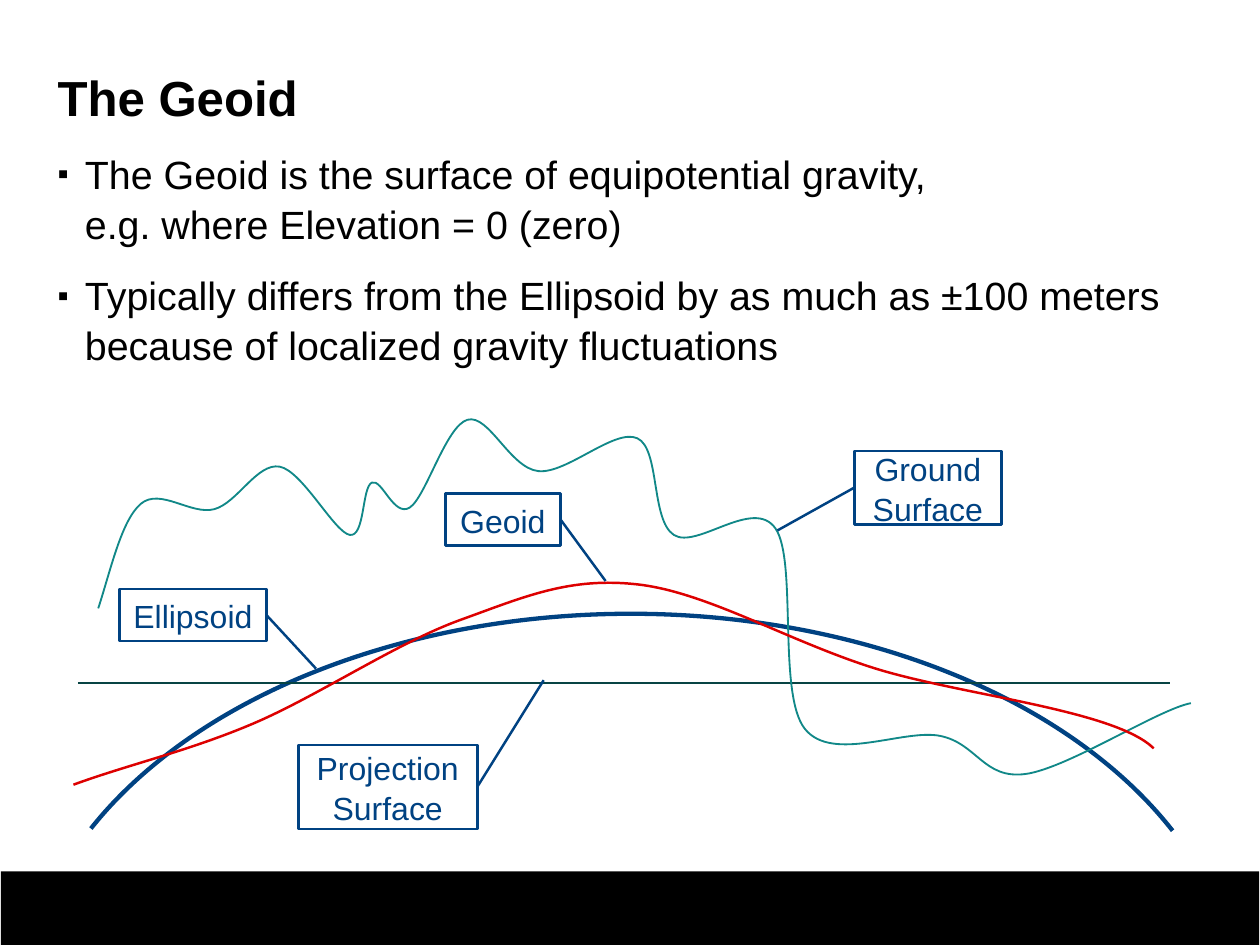
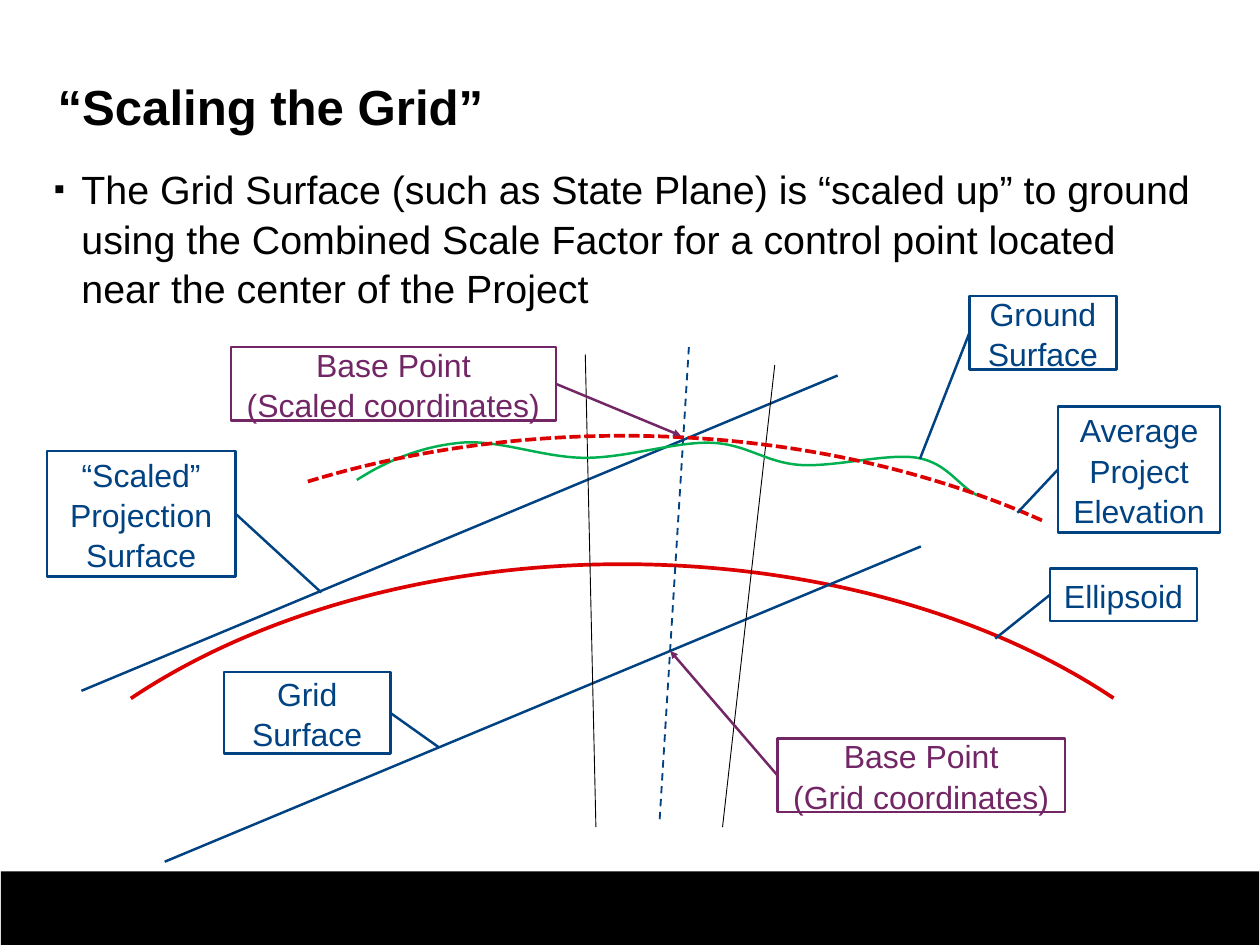
"""Build two slides on the geoid and on scaling a grid to ground."""
from lxml.etree import SubElement
from pptx import Presentation
from pptx.dml.color import RGBColor
from pptx.enum.dml import MSO_LINE
from pptx.enum.shapes import MSO_CONNECTOR, MSO_SHAPE
from pptx.enum.text import MSO_ANCHOR, PP_ALIGN
from pptx.oxml.ns import qn
from pptx.util import Emu, Inches, Pt

BLACK = RGBColor(0x00, 0x00, 0x00)
NAVY = RGBColor(0x00, 0x42, 0x82)
PURPLE = RGBColor(0x73, 0x26, 0x66)
RED = RGBColor(0xDD, 0x00, 0x00)
GREEN = RGBColor(0x00, 0xB0, 0x50)
TEAL = RGBColor(0x11, 0x88, 0x88)
DARK_TEAL = RGBColor(0x08, 0x44, 0x44)

FONT = "Arial"
CELL = Inches(0.1)
COLUMNS, ROWS = 142.3, 106.7
MARGIN, TEXT_WIDTH = 6.5, 128.6
LINE_SPACING = 1.05


def cells(*counts):
    """Turn counts of grid cells into lengths."""
    return [Emu(round(count * CELL)) for count in counts]


def format_text(frame, size, color, bold=False):
    """Give every paragraph of a frame the same type."""
    for paragraph in frame.paragraphs:
        paragraph.line_spacing = LINE_SPACING
        for span in paragraph.runs:
            span.font.name = FONT
            span.font.size = Pt(size)
            span.font.bold = bold
            span.font.color.rgb = color


def style_line(shape, color, width, dash=None):
    """Set the colour, width and dash of a line."""
    shape.line.color.rgb = color
    shape.line.width = Pt(width)
    if dash is not None:
        shape.line.dash_style = dash


def add_outline(page, kind, area, color, width, dash=None):
    """Add an unfilled preset shape."""
    shape = page.shapes.add_shape(kind, *cells(*area))
    shape.shadow.inherit = False
    shape.fill.background()
    style_line(shape, color, width, dash)
    return shape


def add_text(page, area, text):
    """Add a wrapping text box without margins and return its frame."""
    frame = page.shapes.add_textbox(*cells(*area)).text_frame
    frame.word_wrap = True
    frame.margin_left = frame.margin_right = 0
    frame.margin_top = frame.margin_bottom = 0
    frame.text = text
    return frame


def add_page(deck, title, title_height):
    """Add a page with its title and the black band at the foot."""
    page = deck.slides.add_slide(deck.slide_layouts[6])
    band = page.shapes.add_shape(
        MSO_SHAPE.RECTANGLE, *cells(0.1, 98.4, COLUMNS - 0.2, ROWS - 98.4))
    band.shadow.inherit = False
    band.fill.solid()
    band.fill.fore_color.rgb = BLACK
    band.line.fill.background()
    frame = add_text(page, (MARGIN, 4, TEXT_WIDTH, title_height), title)
    frame.vertical_anchor = MSO_ANCHOR.MIDDLE
    format_text(frame, 40, BLACK, bold=True)
    return page


def add_bullets(page, left, top, height, items):
    """Add a list with square bullets."""
    frame = add_text(page, (left, top, TEXT_WIDTH, height), "\n".join(items))
    indent, = cells(3.1)
    for index, paragraph in enumerate(frame.paragraphs):
        properties = paragraph._p.get_or_add_pPr()
        properties.set("marL", str(indent))
        properties.set("indent", str(-indent))
        color = SubElement(properties, qn("a:buClr"))
        SubElement(color, qn("a:srgbClr"), val=str(BLACK))
        SubElement(properties, qn("a:buSzPct"), val="80000")
        SubElement(properties, qn("a:buFont"), typeface=FONT)
        SubElement(properties, qn("a:buChar"), char="▪")
        if index:
            paragraph.space_before = Pt(18)
    format_text(frame, 32, BLACK)


def add_callout(page, text, area, target, color=NAVY, arrow=False):
    """Add a label whose leader runs from the nearer side to a target."""
    left, top, width, height = area
    box = add_outline(page, MSO_SHAPE.LINE_CALLOUT_1, area, color, 2)
    side = 1 if target[0] > left + width / 2 else 0
    leader = (0.5, side, (target[1] - top) / height, (target[0] - left) / width)
    for index, share in enumerate(leader):
        box.adjustments[index] = share
    if arrow:
        line = box.element.spPr.find(qn("a:ln"))
        SubElement(line, qn("a:tailEnd"), type="triangle")
    frame = box.text_frame
    frame.word_wrap = True
    frame.vertical_anchor = MSO_ANCHOR.MIDDLE
    frame.margin_left, frame.margin_right = cells(1.4, 1.4)
    frame.margin_top, frame.margin_bottom = cells(0.7, 0.7)
    frame.text = text
    for paragraph in frame.paragraphs:
        paragraph.alignment = PP_ALIGN.CENTER
    format_text(frame, 26, color)


def add_line(page, start, end, color, width, dash=None):
    """Add a straight line."""
    line = page.shapes.add_connector(
        MSO_CONNECTOR.STRAIGHT, *cells(*start, *end))
    style_line(line, color, width, dash)
    SubElement(line.element.spPr, qn("a:effectLst"))


def add_arc(page, area, angles, color, width, dash=None):
    """Add an arc between two angles in degrees."""
    arc = add_outline(page, MSO_SHAPE.ARC, area, color, width, dash)
    for index, angle in enumerate(angles):
        arc.adjustments[index] = angle * 0.6


def spline_points(knots, first_handle, last_handle):
    """List Bézier points, with tangents a sixth of the neighbours' span."""
    points = [first_handle]
    for before, knot, after in zip(knots, knots[1:], knots[2:]):
        dx, dy = (after[0] - before[0]) / 6, (after[1] - before[1]) / 6
        points += [(knot[0] - dx, knot[1] - dy), knot,
                   (knot[0] + dx, knot[1] + dy)]
    return points + [last_handle, knots[-1]]


def add_curve(page, knots, first_handle, last_handle, color, width):
    """Add a smooth open curve through the knots."""
    builder = page.shapes.build_freeform(*cells(*knots[0]))
    points = spline_points(knots, first_handle, last_handle)
    builder.add_line_segments([cells(*point) for point in points], close=False)
    curve = builder.convert_to_shape()
    curve.shadow.inherit = False
    curve.fill.background()
    style_line(curve, color, width)
    outline = curve.element.find(".//" + qn("a:path"))
    for index, segment in enumerate(outline.findall(qn("a:lnTo"))):
        if index % 3 == 0:
            bend = SubElement(outline, qn("a:cubicBezTo"))
        bend.append(segment[0])
        outline.remove(segment)


def add_geoid_page(deck):
    """Show ground, geoid, ellipsoid and projection surface."""
    page = add_page(deck, "The Geoid", 13.5)
    add_bullets(page, MARGIN, 16.7, 27.5, [
        "The Geoid is the surface of equipotential gravity,\v"
        "e.g. where Elevation = 0 (zero)",
        "Typically differs from the Ellipsoid by as much as ±100 meters "
        "because of localized gravity fluctuations"])
    add_arc(page, (2.5, 69.3, 137.5, 90.1), (198.83, 341.43), NAVY, 3.5)
    add_line(page, (8.8, 77.1), (132.1, 77.1), DARK_TEAL, 2)
    ground = [(11.1, 68.7), (15.9, 56.9), (24.2, 57.5), (31.6, 52.7),
              (39.5, 60.4), (42, 54.5), (46.3, 57.3), (52.8, 47.4),
              (60.8, 53.2), (72, 49.5), (76.1, 60.4), (87.6, 59.7),
              (90.9, 82.3), (106.2, 83.1), (115.8, 87.4), (134.5, 79.4)]
    add_curve(page, ground, (12.5, 64.4), (130.8, 80.1), TEAL, 1.5)
    geoid = [(8.3, 88.6), (28.6, 81.7), (52, 70), (72.1, 66),
             (98.6, 75.4), (130.3, 84.5)]
    add_curve(page, geoid, (14.6, 86.3), (125.8, 80.1), RED, 2)
    for text, area, target in (
            ("Ellipsoid", (13.5, 66.5, 16.6, 5.9), (35.7, 75.5)),
            ("Projection Surface", (33.7, 84.1, 20.2, 9.5), (61.4, 76.8)),
            ("Geoid", (50.3, 55.7, 13, 5.9), (68.4, 65.6)),
            ("Ground Surface", (96.5, 50.9, 16.6, 8.3), (87.8, 59.9))):
        add_callout(page, text, area, target)


def add_scaling_page(deck):
    """Show the grid surface scaled up to the project elevation."""
    page = add_page(deck, "“Scaling the Grid”", 15.5)
    add_bullets(page, 6.1, 18.4, 73.3, [
        "The Grid Surface (such as State Plane) is “scaled up” to ground "
        "using the Combined Scale Factor for a control point located "
        "near the center of the Project"])
    add_arc(page, (-6.2, 63.7, 153, 97.2), (211.06, 328.89), RED, 3)
    for start, end, color, width, dash in (
            ((9.2, 78), (94.6, 42.4), NAVY, 2, None),
            ((18.6, 97.3), (104, 61.7), NAVY, 2, None),
            ((67.3, 93.4), (66.1, 40), BLACK, 0.75, None),
            ((81.6, 93.4), (87.5, 41.2), BLACK, 0.75, None),
            ((74.5, 92.5), (77.8, 39.2), NAVY, 1.5, MSO_LINE.DASH)):
        add_line(page, start, end, color, width, dash)
    ground = [(40.3, 54.2), (52, 50), (66.1, 51.7), (80.3, 50),
              (90.3, 52.5), (103.6, 51.7), (110.3, 55.9)]
    add_curve(page, ground, (43.9, 51.9), (108.2, 54.8), GREEN, 2)
    add_arc(page, (-13, 49.2, 166.7, 108.1), (233.95, 316.92), RED, 3,
            MSO_LINE.SQUARE_DOT)
    for text, area, target in (
            ("Ellipsoid", (118.6, 64.2, 16.6, 5.9), (112.4, 72.1)),
            ("“Scaled” Projection Surface", (5.3, 50.9, 21.3, 14.2),
             (36.3, 66.9)),
            ("Ground Surface", (109.5, 33.4, 16.6, 8.3), (103.9, 51.8)),
            ("Grid Surface", (25.3, 75.9, 18.8, 9.2), (49.6, 84.4)),
            ("Average Project Elevation", (119.5, 45.9, 18.3, 14.2),
             (114.9, 57.9))):
        add_callout(page, text, area, target)
    for kind, area, target in (
            ("Grid", (87.8, 83.4, 32.5, 8.3), (75.7, 73.5)),
            ("Scaled", (26.1, 39.2, 36.7, 8.3), (76.9, 49.2))):
        add_callout(page, f"Base Point\n({kind} coordinates)", area, target,
                    PURPLE, arrow=True)


def main():
    """Build and save the deck."""
    deck = Presentation()
    deck.slide_width, deck.slide_height = cells(COLUMNS, ROWS)
    add_geoid_page(deck)
    add_scaling_page(deck)
    deck.save("out.pptx")


if __name__ == "__main__":
    main()
